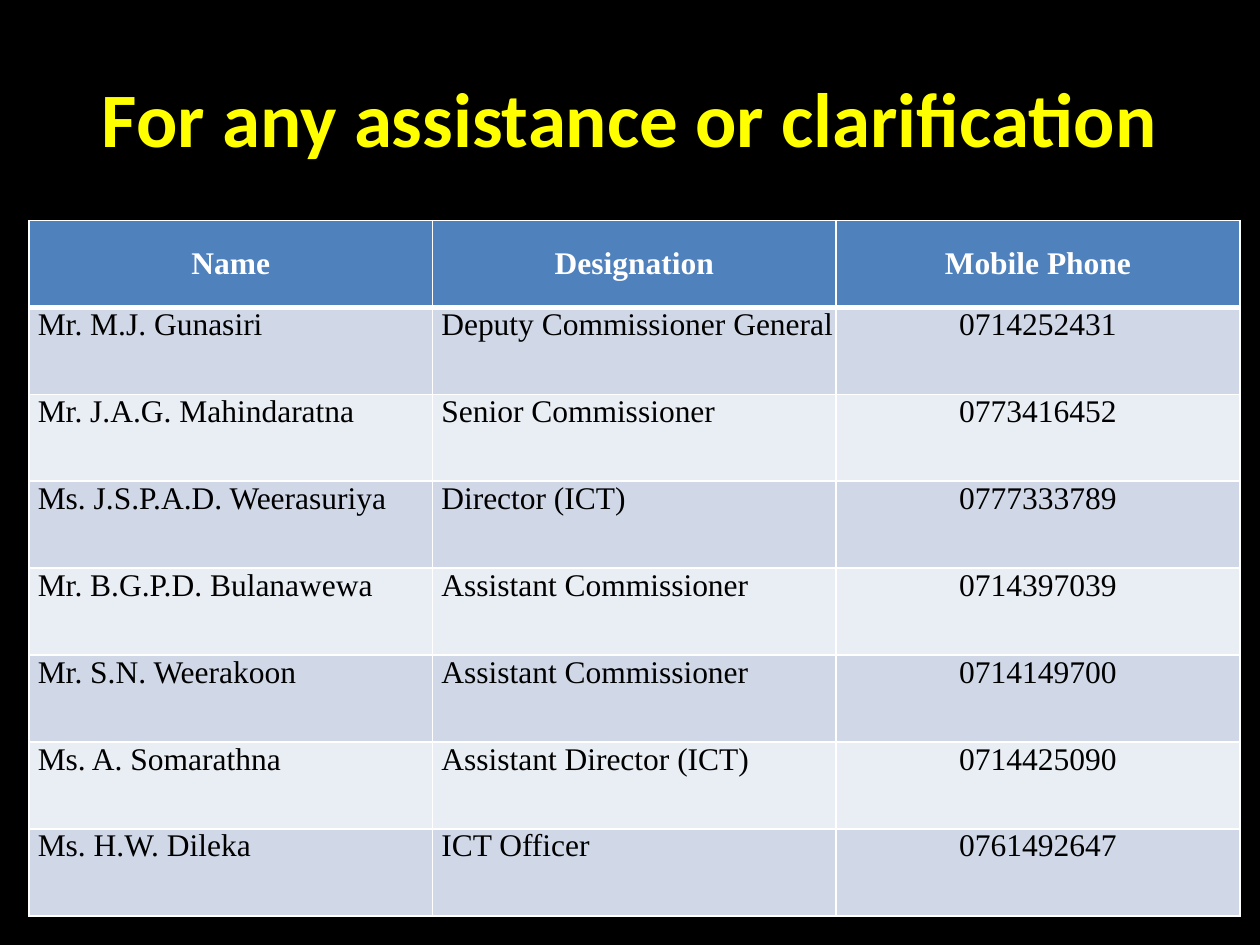
"""Build a slide with a table of contacts for assistance."""
from lxml import etree
from pptx import Presentation
from pptx.dml.color import RGBColor
from pptx.enum.text import MSO_ANCHOR, PP_ALIGN
from pptx.oxml.ns import qn
from pptx.util import Inches, Pt

MIDDLE, TOP = MSO_ANCHOR.MIDDLE, MSO_ANCHOR.TOP
CENTER, LEFT = PP_ALIGN.CENTER, PP_ALIGN.LEFT
BLACK = RGBColor(0x00, 0x00, 0x00)
WHITE = RGBColor(0xFF, 0xFF, 0xFF)
YELLOW = RGBColor(0xFF, 0xFF, 0x00)
BLUE = RGBColor(0x4F, 0x81, 0xBD)
BANDS = RGBColor(0xD0, 0xD8, 0xE8), RGBColor(0xE9, 0xED, 0xF4)

TITLE = "For any assistance or clarification"
HEADS = ("Name", "Designation", "Mobile Phone")
STAFF = [
    ("Mr. M.J. Gunasiri", "Deputy Commissioner General", "0714252431"),
    ("Mr. J.A.G. Mahindaratna", "Senior Commissioner", "0773416452"),
    ("Ms. J.S.P.A.D. Weerasuriya", "Director (ICT)", "0777333789"),
    ("Mr. B.G.P.D. Bulanawewa", "Assistant Commissioner", "0714397039"),
    ("Mr. S.N. Weerakoon", "Assistant Commissioner", "0714149700"),
    ("Ms. A. Somarathna", "Assistant Director (ICT)", "0714425090"),
    ("Ms. H.W. Dileka", "ICT Officer", "0761492647"),
]
GAPS = (2.9, 2, 2, 2, 2, 2.5, 1.9, 1.9)


def write(para, text, font, size, color, bold):
    run = para.add_run()
    run.text = text
    run.font.name, run.font.size = font, Pt(size)
    run.font.color.rgb, run.font.bold = color, bold


def border(cell, side, width):
    props = cell._tc.get_or_add_tcPr()
    line = etree.SubElement(props, qn("a:ln" + side), w=str(Pt(width)))
    fill = etree.SubElement(line, qn("a:solidFill"))
    etree.SubElement(fill, qn("a:srgbClr"), val=str(WHITE))


def fill_cell(cell, text, row, col):
    head = row == 0
    center = head or col == 2
    for side in "LRTB":
        thick = (row, side) in ((0, "B"), (1, "T"))
        border(cell, side, 3 if thick else 1)
    cell.fill.solid()
    cell.fill.fore_color.rgb = BLUE if head else BANDS[(row - 1) % 2]
    cell.margin_left = Inches(0 if center else 0.07)
    cell.margin_right = cell.margin_top = cell.margin_bottom = 0
    cell.vertical_anchor = MIDDLE if head else TOP
    para = cell.text_frame.paragraphs[0]
    para.alignment = CENTER if center else LEFT
    para.space_before = Pt(GAPS[row])
    write(para, text, "Times New Roman", 18, WHITE if head else BLACK, head)


def main():
    deck = Presentation()
    deck.slide_width, deck.slide_height = Inches(10), Inches(7.5)
    slide = deck.slides.add_slide(deck.slide_layouts[5])
    slide.background.fill.solid()
    slide.background.fill.fore_color.rgb = BLACK

    title = slide.shapes.title
    title.left, title.top = Inches(0.5), Inches(0.3)
    title.width, title.height = Inches(9), Inches(1.25)
    title.text_frame.vertical_anchor = MIDDLE
    para = title.text_frame.paragraphs[0]
    para.alignment = CENTER
    write(para, TITLE, "Calibri", 44, YELLOW, True)

    rows = [HEADS] + STAFF
    table = slide.shapes.add_table(
        len(rows), len(HEADS),
        Inches(0.23), Inches(1.75), Inches(9.61), Inches(5.52)).table
    for row, texts in enumerate(rows):
        for col, text in enumerate(texts):
            fill_cell(table.cell(row, col), text, row, col)
    deck.save("out.pptx")


if __name__ == "__main__":
    main()
